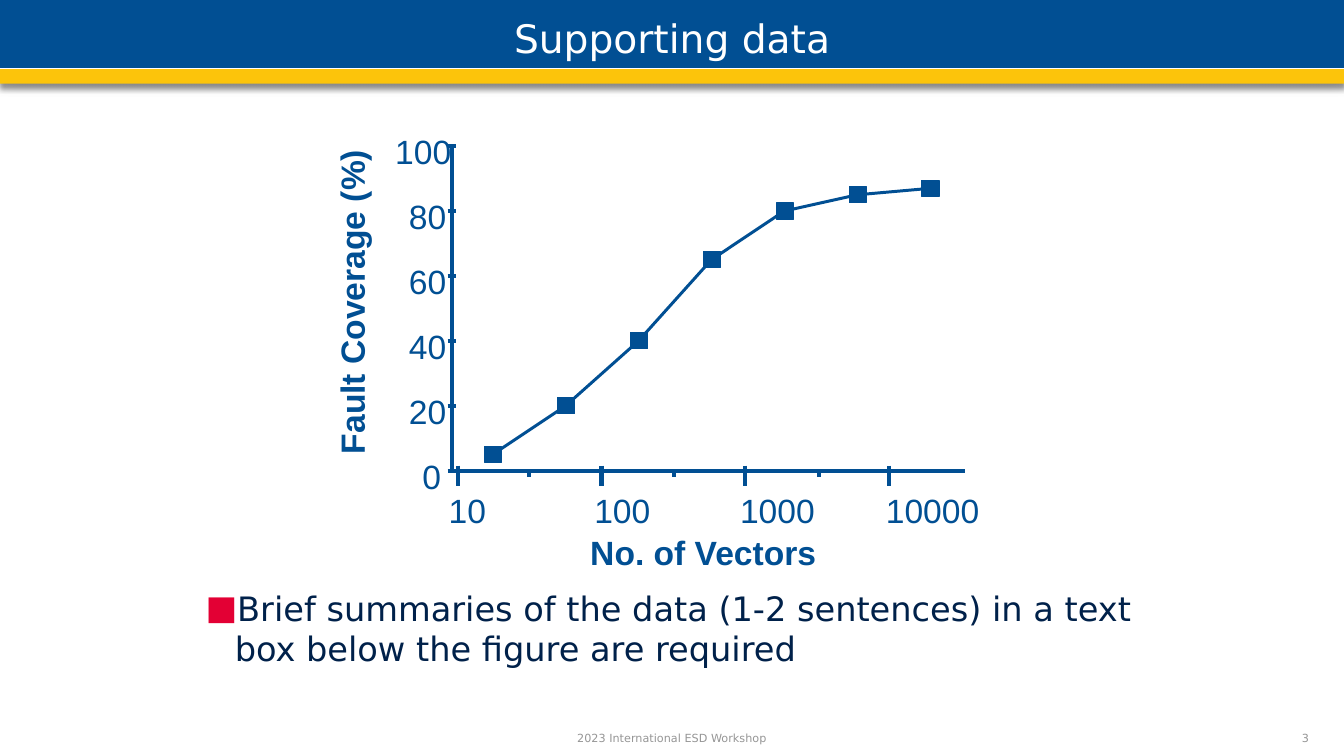
from lxml import etree
from pptx import Presentation
from pptx.dml.color import RGBColor
from pptx.enum.shapes import MSO_CONNECTOR, MSO_SHAPE
from pptx.enum.text import MSO_ANCHOR, MSO_AUTO_SIZE, PP_ALIGN
from pptx.oxml import parse_xml
from pptx.oxml.ns import nsdecls, qn
from pptx.util import Inches, Pt

RECT = MSO_SHAPE.RECTANGLE
STRAIGHT = MSO_CONNECTOR.STRAIGHT
LEFT, CENTER, RIGHT = PP_ALIGN.LEFT, PP_ALIGN.CENTER, PP_ALIGN.RIGHT
TOP, MIDDLE = MSO_ANCHOR.TOP, MSO_ANCHOR.MIDDLE
NO_FIT = MSO_AUTO_SIZE.NONE

W, H = 13.33, 7.5
BLUE, YELLOW, WHITE = "014F93", "FCC40B", "FFFFFF"
NAVY, RED, GREY = "00214A", "E30034", "969696"
SANS, ARIAL = "DejaVu Sans", "Arial"
COVERAGE = [5, 20, 40, 65, 80, 85, 87]
Y_TICKS = [0, 20, 40, 60, 80, 100]
X_TICKS = [10, 100, 1000, 10000]


def rgb(value):
    """Turn a hex string into a colour."""
    return RGBColor.from_string(value)


def inches(*lengths):
    """Convert lengths in inches."""
    return [Inches(length) for length in lengths]


def add_rect(shapes, box, color):
    """Add a plain filled rectangle."""
    sp = shapes.add_shape(RECT, *inches(*box))
    sp.shadow.inherit = False
    sp.fill.solid()
    sp.fill.fore_color.rgb = rgb(color)
    sp.line.fill.background()
    return sp


def add_line(shapes, start, end, color, width):
    """Add a straight line without a shadow."""
    line = shapes.add_connector(STRAIGHT, *inches(*start, *end))
    line.line.color.rgb = rgb(color)
    line.line.width = Pt(width)
    etree.SubElement(line.element.spPr, qn("a:effectLst"))


def drop_shadow(sp, color, alpha, blur, dist):
    """Give a shape a shadow that falls straight down."""
    sp.element.spPr.find(qn("a:effectLst")).append(parse_xml(
        f'<a:outerShdw {nsdecls("a")} blurRad="{Pt(blur)}" dist="{Pt(dist)}" '
        f'dir="5400000" rotWithShape="0"><a:srgbClr val="{color}">'
        f'<a:alpha val="{alpha * 1000}"/></a:srgbClr></a:outerShdw>'))


def write(tf, text, size, font, color, align=LEFT, anchor=TOP, bold=False):
    """Fill a text frame with one formatted paragraph."""
    tf.text = text
    tf.auto_size = NO_FIT
    tf.vertical_anchor = anchor
    p = tf.paragraphs[0]
    p.alignment = align
    p.font.size = Pt(size)
    p.font.name = font
    p.font.bold = bold
    p.font.color.rgb = rgb(color)
    return p


def add_text(shapes, box, text, size, font, color, wrap=False, **style):
    """Add a text box without margins."""
    tb = shapes.add_textbox(*inches(*box))
    tf = tb.text_frame
    tf.margin_left = tf.margin_right = tf.margin_top = tf.margin_bottom = 0
    write(tf, text, size, font, color, **style)
    tf.word_wrap = wrap
    return tb


def add_header(s, box, text):
    """Draw the title band with its stripe and place the title on it."""
    x, y, w, h = box
    split = y + h * 0.82
    drop_shadow(add_rect(s.shapes, (x, y, w, split - y), BLUE), "A6A6A6", 78, 12, 8)
    drop_shadow(add_rect(s.shapes, (x, split, w, h * 0.18), YELLOW), "000000", 40, 4, 3)
    add_line(s.shapes, (x, split), (x + w, split), WHITE, 1)
    title = s.shapes.title
    title.left, title.top, title.width, title.height = inches(
        x, y + 0.07, w, split - y - 0.07)
    write(title.text_frame, text, 28, SANS, WHITE, CENTER, MIDDLE)
    s.shapes.element.append(title.element)


def add_axes(shapes, box):
    """Draw both axes with ticks, tick labels and axis titles."""
    x, y, w, h = box
    base = y + h
    add_line(shapes, (x, y), (x, base), BLUE, 3)
    add_line(shapes, (x, base), (x + w, base), BLUE, 3)
    for value in Y_TICKS:
        tick, label = base - h * value / 100, str(value)
        add_line(shapes, (x - 0.04, tick), (x + 0.04, tick), BLUE, 3)
        left = x - 0.29 - 0.135 * (len(label) - 1)
        add_text(shapes, (left, tick - 0.15, 0.19 * len(label), 0.4),
                 label, 24, ARIAL, BLUE)
    for i, value in enumerate(X_TICKS):
        tick, label = x + w * (0.012 + 0.28 * i), str(value)
        add_line(shapes, (tick, base - 0.05), (tick, base + 0.15), BLUE, 3)
        add_text(shapes, (x + w * (0.284 * i - 0.006), base + 0.19,
                          0.19 * len(label), 0.4), label, 24, ARIAL, BLUE)
    for i in range(len(X_TICKS) - 1):
        tick = x + w * (0.151 + 0.282 * i)
        add_line(shapes, (tick, base), (tick, base + 0.06), BLUE, 3)
    add_text(shapes, (x + w * 0.27, base + 0.61, 2.26, 0.4),
             "No. of Vectors", 24, ARIAL, BLUE, bold=True)
    side = add_text(shapes, (x - 2.52, y + 1.33, 3.05, 0.4),
                    "Fault Coverage (%)", 24, ARIAL, BLUE, bold=True)
    side.rotation = 270


def add_curve(shapes, box):
    """Draw the coverage curve with square markers."""
    x, y, w, h = box
    points = [(x + w * (0.08 + 0.142 * i), y + h * (1 - value / 100))
              for i, value in enumerate(COVERAGE)]
    for start, end in zip(points, points[1:]):
        add_line(shapes, start, end, BLUE, 2.13)
    for px, py in points:
        marker = add_rect(shapes, (px - 0.08, py - 0.08, 0.17, 0.16), BLUE)
        marker.line.color.rgb = rgb(BLUE)
        marker.line.width = Pt(0.75)


def add_figure(s, box):
    """Group the axes and the curve into one figure."""
    grp = s.shapes.add_group_shape()
    add_axes(grp.shapes, box)
    add_curve(grp.shapes, box)


def add_summary(s, box, text):
    """Write the bulleted summary below the figure."""
    tf = s.shapes.add_textbox(*inches(*box)).text_frame
    p = write(tf, text, 24, SANS, NAVY)
    tf.word_wrap = True
    p.space_before = p.space_after = Pt(6)
    pPr = p._p.get_or_add_pPr()
    pPr.set("marL", str(Inches(0.29)))
    pPr.set("indent", str(Inches(-0.29)))
    bullet = (f'<a:buClr {nsdecls("a")}><a:srgbClr val="{RED}"/></a:buClr>',
              f'<a:buFont {nsdecls("a")} typeface="{SANS}"/>',
              f'<a:buChar {nsdecls("a")} char="■"/>')
    at = pPr.index(pPr.find(qn("a:defRPr")))
    for i, xml in enumerate(bullet):
        pPr.insert(at + i, parse_xml(xml))


def add_footer(s, box, text, number):
    """Write the centred footer and the page number."""
    x, y, w, h = box
    add_text(s.shapes, (x + w * 0.248, y, w * 0.504, h), text, 8, SANS, GREY,
             wrap=True, align=CENTER, anchor=MIDDLE)
    add_text(s.shapes, (x + w * 0.855, y, w * 0.119, h), number, 8, SANS, GREY,
             wrap=True, align=RIGHT, anchor=MIDDLE)


def main():
    """Build the slide and save it."""
    prs = Presentation()
    prs.slide_width, prs.slide_height = inches(W, H)
    s = prs.slides.add_slide(prs.slide_layouts[5])
    add_header(s, (0, 0, W, 0.83), "Supporting data")
    add_figure(s, (4.48, 1.45, 5.09, 3.22))
    add_summary(s, (1.94, 5.78, 9.46, 1.42),
                "Brief summaries of the data (1-2 sentences) in a text box "
                "below the figure are required")
    add_footer(s, (0, 7.24, W, 0.16), "2023 International ESD Workshop", "3")
    prs.save("out.pptx")


if __name__ == "__main__":
    main()
